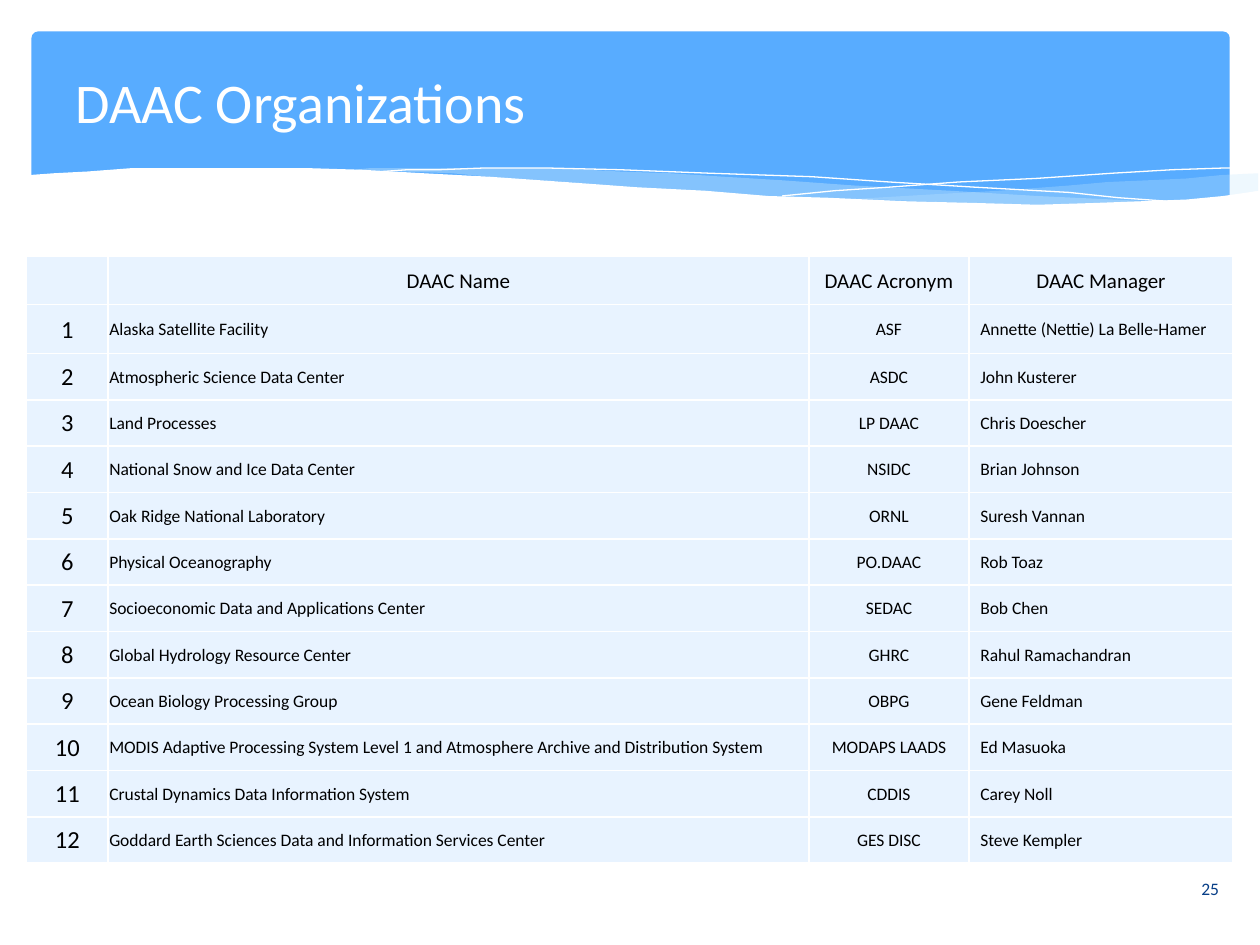
from dataclasses import dataclass

from lxml.etree import SubElement
from pptx import Presentation
from pptx.dml.color import RGBColor
from pptx.enum.shapes import MSO_SHAPE as Shape
from pptx.enum.text import MSO_ANCHOR as Anchor, PP_ALIGN as Align
from pptx.oxml import parse_xml
from pptx.oxml.ns import nsdecls, qn
from pptx.util import Pt

COLORS = {
    "banner": "58ACFF", "ribbon": "C6E7FC", "white": "FFFFFF",
    "cell": "E8F3FF", "text": "000000", "number": "073E87",
}
FONT = "Calibri"


@dataclass
class Wave:
    """Outline in points, filled with the given opacity or drawn as a hairline."""
    points: list[tuple[float, float]]
    color: str
    opacity: int = 100
    filled: bool = True


@dataclass
class Column:
    """Table column with the look of its body cells."""
    heading: str
    width: float
    size: int
    align: Align
    inset: float = 0.72


@dataclass
class Label:
    """Text box with its frame in points."""
    text: str
    frame: tuple[float, float, float, float]
    size: int
    color: str
    align: Align
    inset: float


WAVES = [
    Wave([(718.6, 99.4), (698, 100), (677.5, 101.5), (656, 103), (633, 104.4), (611, 105.8),
          (571, 108.7), (534, 110.9), (499.7, 113), (483, 113.8), (505, 114.5), (526, 115.2),
          (555, 116), (590, 116.6), (628, 116.6), (660, 115.2), (683, 113.8), (704, 111.6),
          (719.3, 109.4), (719.3, 99.4)], "ribbon", 29),
    Wave([(656.6, 115.2), (636.5, 114.5), (592.6, 112.3), (542.9, 109.4), (488, 105.8),
          (447, 103), (414, 100.8), (383, 99.4), (353.5, 97.9), (318, 96.5), (286.6, 95.8),
          (245.5, 95.8), (211.7, 96.5), (201.6, 97.2), (229, 97.9), (258.5, 99.4),
          (290, 101.5), (324, 103.7), (355, 106.6), (384.5, 108.7), (425.5, 111.6),
          (462.9, 113.4), (497.5, 114.8), (529, 115.9), (566.6, 116.6), (600.5, 116.6),
          (637, 115.9)], "ribbon", 40),
    Wave([(218.9, 97.9), (233, 97.2), (251, 96.8), (277, 96.5), (311.8, 96.5), (353.5, 97.2),
          (404.6, 98.6), (463.7, 101.2), (508, 103.7), (557, 106.6), (610.6, 110.2),
          (638.6, 113), (667.4, 115.2)], "white", filled=False),
    Wave([(447, 111.6), (476.6, 109.4), (508, 107.3), (548, 104.4), (591.8, 101.5),
          (636.5, 98.6), (669.6, 97.2), (700, 96.5), (718.6, 95.8)], "white", filled=False),
    Wave([(720, 109.4), (699, 111.6), (677.5, 113.8), (652, 115.2), (625, 115.9), (593, 116.6),
          (558, 116.2), (517.7, 115.2), (473, 113.4), (439, 111.6), (403, 109.4), (364, 106.6),
          (322.6, 103.7), (280, 100.8), (242, 98.6), (206.6, 97.2), (174, 95.8), (145, 95.5),
          (107, 95.5), (76, 96.5), (50, 97.5), (31, 98.8), (17, 100.3), (4.3, 102.2),
          (4.3, 128.2), (720, 128.2)], "white"),
]

COLUMNS = [
    Column("", 46.5, 14, Align.CENTER),
    Column("DAAC Name", 400.5, 10, Align.LEFT),
    Column("DAAC Acronym", 91.5, 10, Align.CENTER),
    Column("DAAC Manager", 151, 10, Align.LEFT, 6.5),
]
CENTERS = [
    ("Alaska Satellite Facility", "ASF", "Annette (Nettie) La Belle-Hamer"),
    ("Atmospheric Science Data Center", "ASDC", "John Kusterer"),
    ("Land Processes", "LP DAAC", "Chris Doescher"),
    ("National Snow and Ice Data Center", "NSIDC", "Brian Johnson"),
    ("Oak Ridge National Laboratory", "ORNL", "Suresh Vannan"),
    ("Physical Oceanography", "PO.DAAC", "Rob Toaz"),
    ("Socioeconomic Data and Applications Center", "SEDAC", "Bob Chen"),
    ("Global Hydrology Resource Center", "GHRC", "Rahul Ramachandran"),
    ("Ocean Biology Processing Group", "OBPG", "Gene Feldman"),
    ("MODIS Adaptive Processing System Level 1 and Atmosphere Archive and Distribution System",
     "MODAPS LAADS", "Ed Masuoka"),
    ("Crustal Dynamics Data Information System", "CDDIS", "Carey Noll"),
    ("Goddard Earth Sciences Data and Information Services Center", "GES DISC", "Steve Kempler"),
]
HEADER_HEIGHT, FIRST_HEIGHT, ROW_HEIGHT = 27.5, 28, 26.5
LABELS = [
    Label("DAAC Organizations", (36, 22.5, 582.5, 70), 32, "white", Align.LEFT, 7.2),
    Label("25", (679, 493, 25, 29), 10, "number", Align.CENTER, 0),
]


def rgb(name: str) -> RGBColor:
    return RGBColor.from_string(COLORS[name])


def paint(fill, name: str) -> None:
    fill.solid()
    fill.fore_color.rgb = rgb(name)


def format_text(paragraph, size: int, color: str, align: Align) -> None:
    paragraph.alignment = align
    for run in paragraph.runs:
        run.font.name = FONT
        run.font.size = Pt(size)
        run.font.color.rgb = rgb(color)


def add_banner(slide) -> None:
    banner = slide.shapes.add_shape(Shape.ROUNDED_RECTANGLE, Pt(18), Pt(18), Pt(684.7), Pt(107.3))
    banner.adjustments[0] = 0.034
    banner.shadow.inherit = False
    paint(banner.fill, "banner")
    banner.line.fill.background()


def add_wave(slide, wave: Wave) -> None:
    builder = slide.shapes.build_freeform(*wave.points[0], scale=Pt(1))
    builder.add_line_segments(wave.points[1:], close=wave.filled)
    shape = builder.convert_to_shape()
    shape.shadow.inherit = False
    if not wave.filled:
        shape.fill.background()
        paint(shape.line.fill, wave.color)
        shape.line.width = Pt(0)
        return
    paint(shape.fill, wave.color)
    shape.line.fill.background()
    if wave.opacity < 100:
        color = shape.fill._xPr.find(qn("a:solidFill"))[0]
        SubElement(color, qn("a:alpha"), val=str(wave.opacity * 1000))


def add_label(slide, label: Label) -> None:
    text_frame = slide.shapes.add_textbox(*map(Pt, label.frame)).text_frame
    text_frame.word_wrap = True
    text_frame.vertical_anchor = Anchor.MIDDLE
    text_frame.margin_left = text_frame.margin_right = Pt(label.inset)
    text_frame.text = label.text
    format_text(text_frame.paragraphs[0], label.size, label.color, label.align)


def fill_cell(cell, text: str, size: int, align: Align, inset: float) -> None:
    cell.margin_left, cell.margin_right = Pt(inset), Pt(0.72)
    cell.margin_top, cell.margin_bottom = Pt(0.72), Pt(0)
    cell.vertical_anchor = Anchor.MIDDLE
    paint(cell.fill, "cell")
    cell.text_frame.text = text
    format_text(cell.text_frame.paragraphs[0], size, "text", align)
    properties = cell._tc.get_or_add_tcPr()
    for index, side in enumerate("LRTB"):
        properties.insert(index, parse_xml(
            f'<a:ln{side} {nsdecls("a")} w="{Pt(1)}"><a:solidFill>'
            f'<a:srgbClr val="{COLORS["white"]}"/></a:solidFill></a:ln{side}>'))


def add_centers_table(slide) -> None:
    heights = [HEADER_HEIGHT, FIRST_HEIGHT] + [ROW_HEIGHT] * (len(CENTERS) - 1)
    width = sum(column.width for column in COLUMNS)
    table = slide.shapes.add_table(len(heights), len(COLUMNS), Pt(15.25), Pt(146.5),
                                   Pt(width), Pt(sum(heights))).table
    table.first_row = table.horz_banding = False
    for row, height in zip(table.rows, heights):
        row.height = Pt(height)
    for index, column in enumerate(COLUMNS):
        table.columns[index].width = Pt(column.width)
        fill_cell(table.cell(0, index), column.heading, 12, Align.CENTER, 0.72)
        for number, center in enumerate(CENTERS, 1):
            text = (str(number), *center)[index]
            fill_cell(table.cell(number, index), text, column.size, column.align, column.inset)


def main() -> None:
    """Build the DAAC organizations slide."""
    presentation = Presentation()
    presentation.slide_width, presentation.slide_height = Pt(720), Pt(540)
    slide = presentation.slides.add_slide(presentation.slide_layouts[6])
    add_banner(slide)
    for wave in WAVES:
        add_wave(slide, wave)
    for label in LABELS:
        add_label(slide, label)
    add_centers_table(slide)
    presentation.save("out.pptx")


if __name__ == "__main__":
    main()
